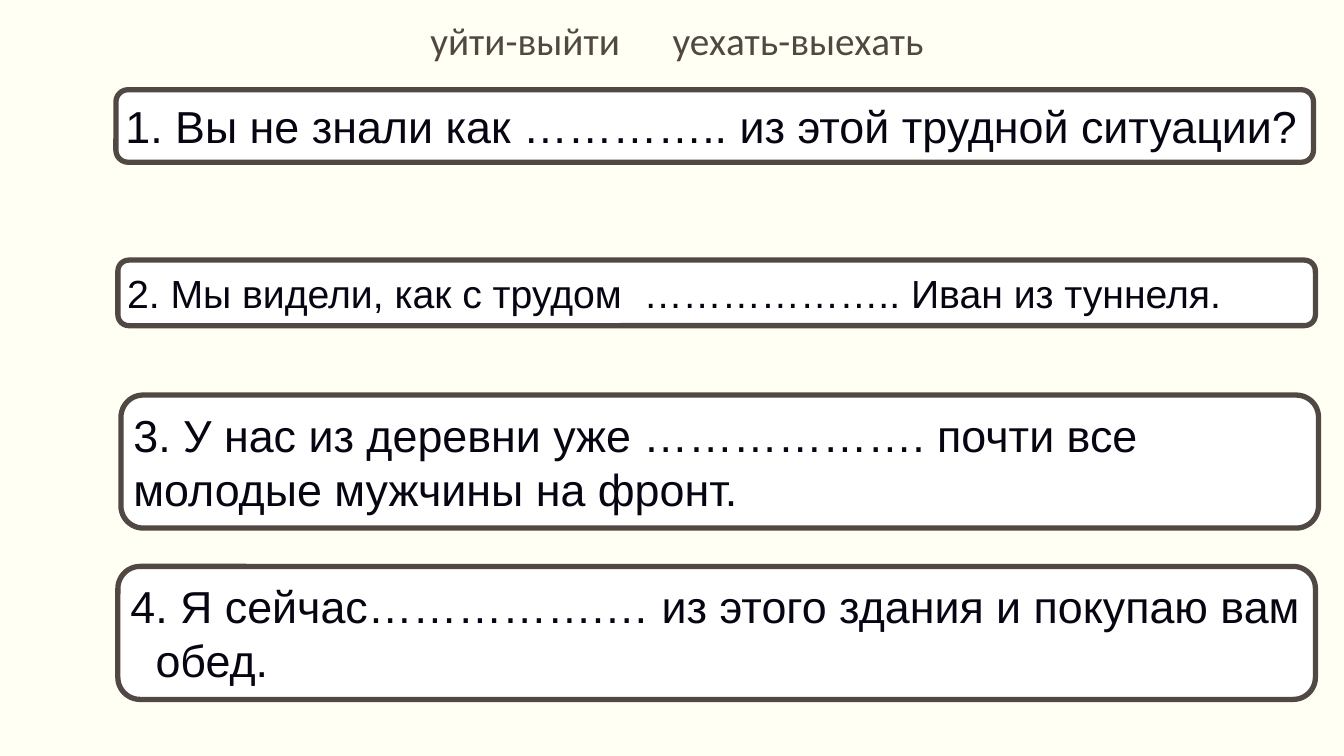
from lxml import etree
from pptx import Presentation
from pptx.dml.color import RGBColor
from pptx.enum.shapes import MSO_SHAPE
from pptx.enum.text import MSO_ANCHOR, MSO_AUTO_SIZE, PP_ALIGN
from pptx.oxml.ns import qn
from pptx.util import Pt

CREAM = RGBColor(0xFF, 0xFF, 0xF3)
WHITE = RGBColor(0xFF, 0xFF, 0xFF)
BROWN = RGBColor(0x51, 0x48, 0x43)
INK = RGBColor(0x08, 0x05, 0x13)

SENTENCE_WIDTH = 855.4
SENTENCES = [
    ("1. Вы не знали как ………….. из этой трудной ситуации?", 82.8, 64.1, 51.8, 32, 0),
    ("2. Мы видели, как с трудом  ……………….. Иван из туннеля.", 84.2, 185.8, 46.8, 28, 0),
    ("3. У нас из деревни уже ………………. почти все молодые мужчины на фронт.",
     86.4, 282.2, 95, 32, 0),
    ("4. Я сейчас…………….… из этого здания и покупаю вам обед.",
     84.2, 404.6, 95, 32, 18),
]


def add_run(paragraph, text, font_name, size, color):
    """Append one formatted run to a paragraph."""
    run = paragraph.add_run()
    run.text = text
    run.font.name = font_name
    run.font.size = Pt(size)
    run.font.bold = False
    run.font.color.rgb = color


def set_margins(frame, horizontal, vertical):
    """Set the inner margins of a text frame."""
    frame.margin_left = frame.margin_right = Pt(horizontal)
    frame.margin_top = frame.margin_bottom = Pt(vertical)


def format_verb_pairs(heading):
    """Place the title and set the two verb pairs apart with a tab stop."""
    heading.left, heading.top = Pt(86.4), Pt(-126)
    heading.width, heading.height = Pt(794.9), Pt(175)
    frame = heading.text_frame
    set_margins(frame, 0, 3.6)
    frame.margin_left = Pt(221)
    frame.word_wrap = True
    frame.auto_size = MSO_AUTO_SIZE.NONE
    frame.vertical_anchor = MSO_ANCHOR.BOTTOM
    pairs = frame.paragraphs[0]
    pairs.alignment = PP_ALIGN.LEFT
    pairs.line_spacing = 0.9
    stops = etree.SubElement(pairs._p.get_or_add_pPr(), qn("a:tabLst"))
    etree.SubElement(stops, qn("a:tab"), pos=str(Pt(173)), algn="l")
    add_run(pairs, "уйти-выйти\tуехать-выехать", "Calibri", 28, BROWN)


def add_sentence(slide, text, left, top, height, size, hanging):
    """Add one exercise sentence in a rounded frame."""
    card = slide.shapes.add_shape(
        MSO_SHAPE.ROUNDED_RECTANGLE, Pt(left), Pt(top), Pt(SENTENCE_WIDTH), Pt(height))
    card.shadow.inherit = False
    card.fill.solid()
    card.fill.fore_color.rgb = WHITE
    card.line.color.rgb = BROWN
    card.line.width = Pt(3.78)
    frame = card.text_frame
    set_margins(frame, 4.3, 4.3)
    frame.word_wrap = True
    frame.auto_size = MSO_AUTO_SIZE.SHAPE_TO_FIT_TEXT
    frame.vertical_anchor = MSO_ANCHOR.MIDDLE
    sentence = frame.paragraphs[0]
    sentence.alignment = PP_ALIGN.LEFT
    if hanging:
        properties = sentence._p.get_or_add_pPr()
        properties.set("marL", str(Pt(hanging)))
        properties.set("indent", str(Pt(-hanging)))
    add_run(sentence, text, "Arial", size, INK)


def main():
    """Build the verb exercise slide and save it."""
    deck = Presentation()
    deck.slide_width, deck.slide_height = Pt(960), Pt(540)
    slide = deck.slides.add_slide(deck.slide_layouts.get_by_name("Title Only"))
    slide.background.fill.solid()
    slide.background.fill.fore_color.rgb = CREAM
    format_verb_pairs(slide.shapes.title)
    for sentence in SENTENCES:
        add_sentence(slide, *sentence)
    deck.save("out.pptx")


if __name__ == "__main__":
    main()
